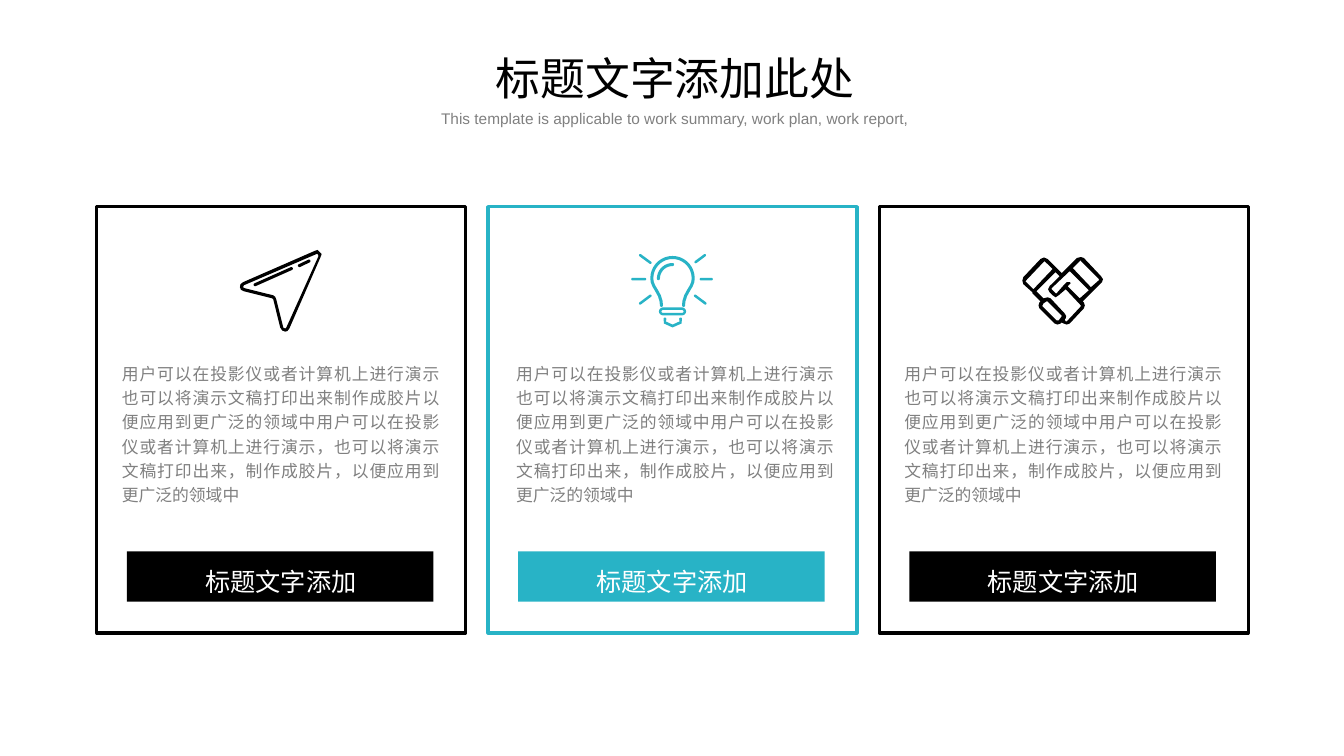
from dataclasses import dataclass
from math import atan2, cos, pi, radians, sin

from pptx import Presentation
from pptx.dml.color import RGBColor
from pptx.enum.shapes import MSO_SHAPE as Preset
from pptx.enum.text import MSO_AUTO_SIZE as AutoSize, PP_ALIGN as Align
from pptx.shapes.autoshape import Shape
from pptx.shapes.shapetree import GroupShapes
from pptx.util import Inches, Pt

Point = tuple[float, float]
Contour = list[Point]


@dataclass(frozen=True)
class Theme:
    """Colours, font and type sizes of the slide."""
    font: str = "Arial"
    black: RGBColor = RGBColor(0, 0, 0)
    teal: RGBColor = RGBColor(0x28, 0xB3, 0xC6)
    gray: RGBColor = RGBColor(0x80, 0x80, 0x80)
    white: RGBColor = RGBColor(255, 255, 255)
    title: float = 32
    subtitle: float = 11
    body: float = 12
    label: float = 18
    border: float = 2.25


@dataclass(frozen=True)
class Box:
    """A rectangle in inches."""
    left: float
    top: float
    width: float
    height: float


@dataclass(frozen=True)
class TextStyle:
    """The look of one text block."""
    size: float
    color: RGBColor
    align: Align = Align.CENTER
    spacing: float = 1.2
    wrap: bool = True


@dataclass(frozen=True)
class Card:
    """One column: accent colour, icon and offset of its body text."""
    accent: RGBColor
    icon: list[Contour]
    icon_top: float
    body_offset: float


THEME = Theme()
CARD_LEFT, CARD_PITCH, ICON_OFFSET = 0.96, 3.88, 1.42
BODY = (
    "用户可以在投影仪或者计算机上进行演示也可以将演示文稿打印出来制作成胶片以便应用到更广泛的领域中"
    "用户可以在投影仪或者计算机上进行演示，也可以将演示文稿打印出来，制作成胶片，以便应用到更广泛的领域中"
)


def arc(center: Point, radius: float, start: int, end: int, step: int = 10) -> Contour:
    """Return points along a circular arc, angles in degrees."""
    return [
        (center[0] + radius * cos(radians(angle)), center[1] + radius * sin(radians(angle)))
        for angle in range(start, end + 1, step)
    ]


def ribbon(line: Contour, width: float) -> Contour:
    """Return the outline of a round-ended band along a line."""
    half = width / 2
    left, right, angles = [], [], []
    for index, (x, y) in enumerate(line):
        before, after = line[max(index - 1, 0)], line[min(index + 1, len(line) - 1)]
        angle = atan2(after[1] - before[1], after[0] - before[0])
        dx, dy = half * sin(angle), half * cos(angle)
        left.append((x + dx, y - dy))
        right.append((x - dx, y + dy))
        angles.append(round(angle * 180 / pi))
    end_cap = arc(line[-1], half, angles[-1] - 90, angles[-1] + 90, 30)
    start_cap = arc(line[0], half, angles[0] + 90, angles[0] + 270, 30)
    return left + end_cap + right[::-1] + start_cap


def plane_icon() -> list[Contour]:
    """Return the paper plane in hundredths of an inch."""
    return [
        [(74, 1), (77, 0), (79, 2), (81, 4), (80, 7), (49, 78), (47, 80.5), (45, 81), (42, 80),
         (40, 77), (33, 49), (32, 48), (4, 41), (1, 39.5), (0, 37), (.5, 34), (3, 32)],
        [(76, 4), (4, 35), (3, 37), (5, 38), (33, 45), (35, 46.5), (36, 49), (43, 77),
         (45, 78), (46, 77), (78, 6), (77, 4)],
        ribbon([(15, 34.5), (51, 18.5)], 3),
        ribbon([(59, 15.5), (68.5, 11)], 3),
    ]


def bulb_icon() -> list[Contour]:
    """Return the light bulb in hundredths of an inch."""
    neck = [(30, 51), (29.7, 47), (28, 41.5), (25, 36), (22.3, 31.5)]
    mirrored_neck = [(82 - x, y) for x, y in reversed(neck)]
    rays = [
        [(1.3, 25), (13.7, 25)], [(69.2, 25), (79.7, 25)],
        [(9, 1.3), (19, 8.7)], [(73, 1.3), (64, 8)],
        [(63.5, 41.5), (73.5, 49)], [(19, 41.5), (9, 49)],
    ]
    socket = [(31.5, 57), (50.5, 57)]
    return [
        ribbon(neck + arc((41, 24), 20.5, 170, 370) + mirrored_neck, 3),
        ribbon(arc((41, 24.5), 14, 180, 270), 3),
        ribbon(socket, 8),
        ribbon(socket, 3),
        ribbon([(33.5, 64.5), (33.5, 68), (41, 71.5), (49, 68), (49, 64.5)], 2.8),
        *(ribbon(ray, 2.5) for ray in rays),
    ]


def handshake_icon() -> list[Contour]:
    """Return the handshake in hundredths of an inch."""
    return [
        [(58, 0), (61, 1), (78, 19), (80, 22), (79, 25), (70, 34), (60, 44), (61, 45),
         (62, 48), (61, 51), (47, 66), (44, 67), (41, 66), (39, 65), (38, 66), (35, 67),
         (32, 66), (17, 51), (16, 48), (17, 45), (18, 44), (10, 36), (10, 35), (1, 27),
         (0, 23.5), (1, 20), (18, 2), (21.5, .5), (25, 2), (34, 11), (39, 16), (45, 10),
         (54, 1)],
        [(24, 44), (21, 46), (20, 48), (20, 49), (34, 63), (36, 63), (39, 59), (39, 58),
         (25, 44)],
        [(33, 15), (14, 34), (21, 41), (25, 40), (28, 41), (42, 56), (43.5, 58.5), (43, 61),
         (42, 62), (43, 64), (44, 64), (58, 49), (58, 48), (43, 32), (36, 38), (33, 40),
         (30, 38), (27, 35), (25.5, 32), (27, 29), (37, 19)],
        [(47, 14), (29, 31), (29, 32), (33, 36), (34, 36), (41, 28), (44, 25), (47, 25),
         (48, 26), (47, 27), (45, 29), (57, 41), (66, 33)],
        [(22, 4), (21, 5), (4, 23), (3, 24), (11, 32), (30, 12), (23, 5)],
        [(58, 3), (57, 4), (50, 11), (68, 30), (76, 23), (76, 22), (58, 4)],
    ]


def place(box: Box) -> tuple[int, int, int, int]:
    """Convert a box to slide lengths."""
    return Inches(box.left), Inches(box.top), Inches(box.width), Inches(box.height)


def add_text(shapes: GroupShapes, box: Box, text: str, style: TextStyle) -> None:
    """Add a text box that grows with its text."""
    text_frame = shapes.add_textbox(*place(box)).text_frame
    text_frame.word_wrap = style.wrap
    text_frame.auto_size = AutoSize.SHAPE_TO_FIT_TEXT
    text_frame.text = text
    paragraph = text_frame.paragraphs[0]
    paragraph.alignment = style.align
    paragraph.line_spacing = style.spacing
    font = paragraph.runs[0].font
    font.name, font.size = THEME.font, Pt(style.size)
    font.color.rgb = style.color


def fill_solid(shape: Shape, color: RGBColor) -> None:
    """Give a shape a plain fill without line or shadow."""
    shape.shadow.inherit = False
    shape.fill.solid()
    shape.fill.fore_color.rgb = color
    shape.line.fill.background()


def add_icon(shapes: GroupShapes, left: float, top: float, card: Card) -> None:
    """Draw all contours of an icon as one filled freeform."""
    contours = [
        [(Inches(left + x / 100), Inches(top + y / 100)) for x, y in contour]
        for contour in card.icon
    ]
    builder = shapes.build_freeform(*contours[0][0])
    builder.add_line_segments(contours[0][1:], close=True)
    for contour in contours[1:]:
        builder.move_to(*contour[0])
        builder.add_line_segments(contour[1:], close=True)
    fill_solid(builder.convert_to_shape(), card.accent)


def add_card(shapes: GroupShapes, left: float, card: Card) -> None:
    """Draw a framed card with icon, body text and labelled bar."""
    frame = shapes.add_shape(Preset.RECTANGLE, *place(Box(left, 2.05, 3.66, 4.23)))
    frame.shadow.inherit = False
    frame.fill.background()
    frame.line.color.rgb = card.accent
    frame.line.width = Pt(THEME.border)
    bar = shapes.add_shape(Preset.RECTANGLE, *place(Box(left + 0.3, 5.47, 3.04, 0.5)))
    fill_solid(bar, card.accent)
    add_text(shapes, Box(left + card.body_offset, 3.52, 3.35, 1.56), BODY,
             TextStyle(THEME.body, THEME.gray, Align.JUSTIFY))
    add_text(shapes, Box(left + 0.6, 5.51, 2.45, 0.44), "标题文字添加",
             TextStyle(THEME.label, THEME.white))
    add_icon(shapes, left + ICON_OFFSET, card.icon_top, card)


def main() -> None:
    """Build and save the slide."""
    presentation = Presentation()
    presentation.slide_width, presentation.slide_height = Inches(13.33), Inches(7.5)
    slide = presentation.slides.add_slide(presentation.slide_layouts[6])
    heading = slide.shapes.add_group_shape().shapes
    add_text(heading, Box(4.8, 0.45, 3.79, 0.64), "标题文字添加此处",
             TextStyle(THEME.title, THEME.black, spacing=1.0, wrap=False))
    add_text(heading, Box(3.63, 1, 6.13, 0.3),
             "This template is applicable to work summary, work plan, work report,",
             TextStyle(THEME.subtitle, THEME.gray))
    cards = [
        Card(THEME.black, plane_icon(), 2.48, 0.15),
        Card(THEME.teal, bulb_icon(), 2.52, 0.18),
        Card(THEME.black, handshake_icon(), 2.55, 0.15),
    ]
    for index, card in enumerate(cards):
        add_card(slide.shapes.add_group_shape().shapes, CARD_LEFT + index * CARD_PITCH, card)
    presentation.save("out.pptx")


if __name__ == "__main__":
    main()
